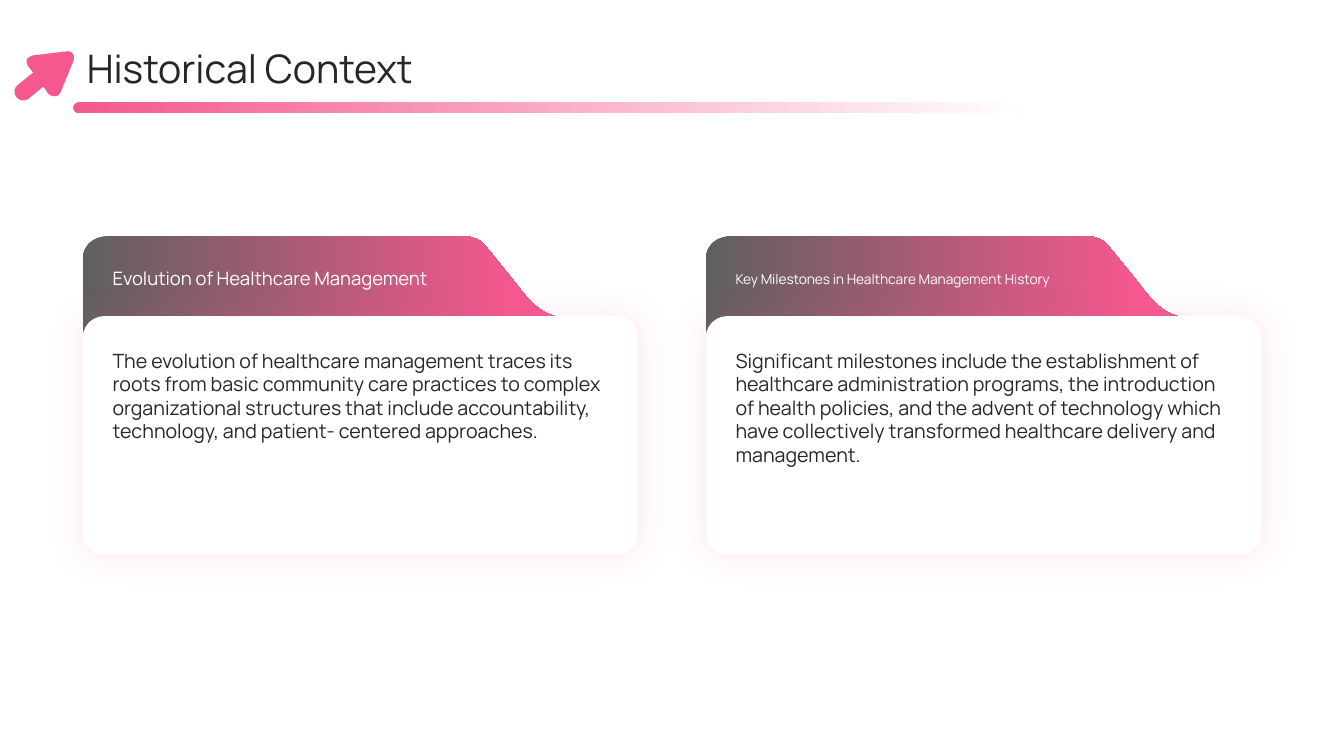
from lxml.etree import SubElement
from pptx import Presentation
from pptx.dml.color import RGBColor
from pptx.enum.shapes import MSO_SHAPE
from pptx.enum.text import MSO_ANCHOR
from pptx.oxml.ns import qn
from pptx.util import Pt

COLORS = {"pink": "F4588E", "gray": "5F5F5F", "white": "FFFFFF", "ink": "262626"}
FONT = "Manrope"
TITLE = "Historical Context"
CARDS = [
    ("Evolution of Healthcare Management", 13.2,
     "The evolution of healthcare management traces its roots from basic community care "
     "practices to complex organizational structures that include accountability, "
     "technology, and patient- centered approaches."),
    ("Key Milestones in Healthcare Management History", 9.75,
     "Significant milestones include the establishment of healthcare administration "
     "programs, the introduction of health policies, and the advent of technology which "
     "have collectively transformed healthcare delivery and management."),
]
TAB = [
    (339.8, 57.6), (0, 85), (0, 15.1),
    (0, 6.5, 7.9, 0, 17.3, 0), (273.2, 0),
    (278.4, 0, 283.4, 2.2, 286.9, 5.8), (304.4, 27.4),
    (313.2, 37.4, 321.8, 54, 339.8, 57.6),
]
ARROW = [
    (19.4, 41.8), (18.7, 43.2, 18.7, 44.6, 20.2, 47.5), (23.8, 51.8), (13, 60.5),
    (10.1, 62.6, 9.4, 66.2, 11.5, 69.1), (13.7, 72, 17.3, 72.7, 20.2, 70.6),
    (31, 61.9), (34.6, 67), (34.6, 67, 39.6, 72, 43.2, 66.2), (52.6, 43.2),
    (52.6, 43.2, 54.7, 36, 47.5, 36.7), (23.8, 39.6),
    (23.8, 39.6, 20.9, 40.3, 19.4, 41.8),
]
CARD_LEFT, CARD_STEP, CARD_W, CARD_H = 59.1, 445, 396.7, 170
TAB_TOP, CARD_TOP = 168.9, 225.8
TEXT_INSET, TEXT_W = 21.3, 354.2


def rgb(name):
    return RGBColor.from_string(COLORS[name])


def paint(sp, *stops):
    sp.shadow.inherit = False
    sp.line.fill.background()
    if len(stops) == 1:
        sp.fill.solid()
        sp.fill.fore_color.rgb = rgb(stops[0][1])
        return
    sp.fill.gradient()
    sp.fill.gradient_angle = 0
    for stop, (position, color) in zip(sp.fill.gradient_stops, stops):
        stop.position = position
        stop.color.rgb = rgb(color)


def add_outline(s, segments, left, top, *stops):
    ends = [(Pt(left + seg[-2]), Pt(top + seg[-1])) for seg in segments]
    builder = s.shapes.build_freeform(*ends[0])
    builder.add_line_segments(ends[1:], close=True)
    sp = builder.convert_to_shape()
    lines = list(sp._element.iter(qn("a:lnTo")))
    for line, seg in zip(lines, segments[1:]):
        if len(seg) == 2:
            continue
        curve = line.makeelement(qn("a:cubicBezTo"))
        for x, y in zip(seg[::2], seg[1::2]):
            SubElement(curve, qn("a:pt"), x=str(Pt(left + x) - sp.left),
                       y=str(Pt(top + y) - sp.top))
        line.getparent().replace(line, curve)
    paint(sp, *stops)


def add_round(s, box, radius, *stops):
    sp = s.shapes.add_shape(MSO_SHAPE.ROUNDED_RECTANGLE, *map(Pt, box))
    sp.adjustments[0] = radius
    paint(sp, *stops)
    return sp


def add_glow(sp, color, alpha, blur):
    effects = sp._element.spPr.find(qn("a:effectLst"))
    shadow = SubElement(effects, qn("a:outerShdw"), blurRad=str(Pt(blur)), dist="0",
                        dir="5400000", algn="ctr", rotWithShape="0")
    tint = SubElement(shadow, qn("a:srgbClr"), val=COLORS[color])
    SubElement(tint, qn("a:alpha"), val=str(alpha * 1000))


def add_text(s, box, text, size, color, anchor):
    tf = s.shapes.add_textbox(*map(Pt, box)).text_frame
    frame = {"word_wrap": True, "vertical_anchor": anchor, "margin_left": 0,
             "margin_top": 0, "margin_right": 0, "margin_bottom": 0}
    for name, value in frame.items():
        setattr(tf, name, value)
    r = tf.paragraphs[0].add_run()
    r.text = text
    for name, value in {"size": Pt(size), "name": FONT}.items():
        setattr(r.font, name, value)
    r.font.color.rgb = rgb(color)


def add_card(s, left, heading, size, body):
    add_outline(s, TAB, left, TAB_TOP, (0, "gray"), (0.9, "pink"))
    panel = add_round(s, (left, CARD_TOP, CARD_W, CARD_H), 0.09, (0, "white"))
    add_glow(panel, "pink", 15, 25)
    x = left + TEXT_INSET
    add_text(s, (x, 185, 266.8, 28), heading, size, "white", MSO_ANCHOR.MIDDLE)
    add_text(s, (x, 249.1, TEXT_W, 121), body, 14, "ink", MSO_ANCHOR.TOP)


def main():
    prs = Presentation()
    prs.slide_width, prs.slide_height = Pt(960), Pt(540)
    s = prs.slides.add_slide(prs.slide_layouts[6])
    for i, card in enumerate(CARDS):
        add_card(s, CARD_LEFT + i * CARD_STEP, *card)
    add_text(s, (62, 30.2, 840, 36.7), TITLE, 28, "ink", MSO_ANCHOR.MIDDLE)
    add_round(s, (52.2, 73, 679.7, 8), 0.5, (0, "pink"), (1, "white"))
    add_outline(s, ARROW, 0, 0, (0, "pink"))
    prs.save("out.pptx")


if __name__ == "__main__":
    main()
